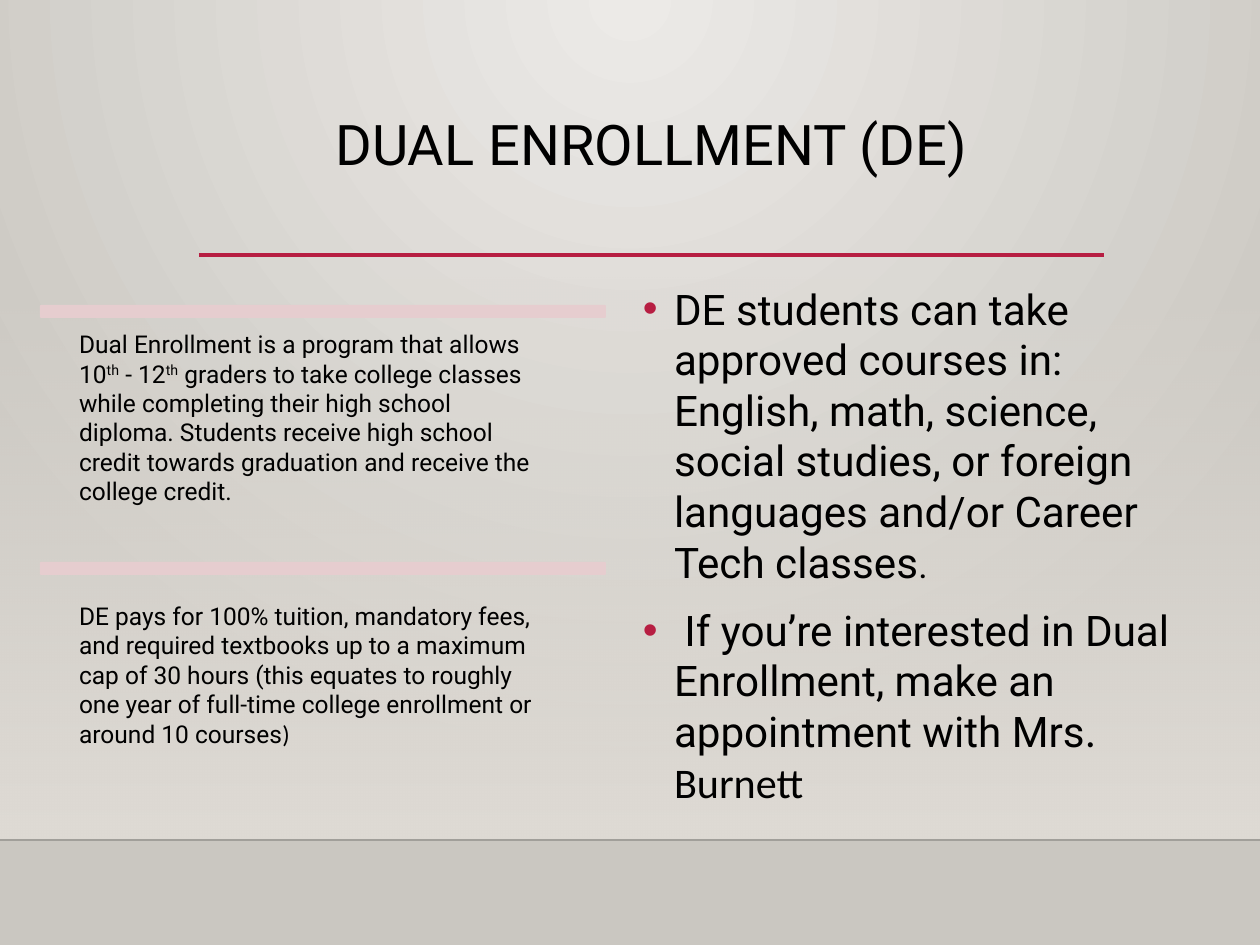
import dataclasses

import lxml.etree
import pptx
import pptx.dml.color
import pptx.enum.shapes
import pptx.enum.text
import pptx.oxml.ns
import pptx.util

qn = pptx.oxml.ns.qn
SHAPES = pptx.enum.shapes.MSO_SHAPE
ANCHOR = pptx.enum.text.MSO_ANCHOR
ALIGN = pptx.enum.text.PP_ALIGN


@dataclasses.dataclass(frozen=True)
class Theme:
    """Colours, fonts and type sizes of the slide."""
    text: str = "000000"
    accent: str = "B71E42"
    bar: str = "E6CDCF"
    light: str = "ECEAE7"
    dark: str = "CAC7C1"
    wall: str = "DFDBD5"
    edge: str = "000001"
    font: str = "Roboto"
    second_font: str = "Calibri"
    title_size: float = 32
    body_size: float = 24.1
    stop_size: float = 20.4
    note_size: float = 14


THEME = Theme()


def px(length):
    """Turn pixels into EMU."""
    return pptx.util.Emu(round(length * 914400 / 126))


def place(shape, box):
    """Move and size a shape to a pixel box."""
    shape.left, shape.top, shape.width, shape.height = map(px, box)


def rgb(color):
    """Return a colour object for a hex string."""
    return pptx.dml.color.RGBColor.from_string(color)


def add_text(paragraph, text, size, font=THEME.font, color=THEME.text, raised=False):
    """Append a formatted run to a paragraph."""
    run = paragraph.add_run()
    run.text = text
    run.font.size = pptx.util.Pt(size)
    run.font.name = font
    run.font.color.rgb = rgb(color)
    if raised:
        run.font._element.set("baseline", "30000")


def set_frame(frame, anchor, margin_x, margin_y):
    """Set wrapping, anchor and insets of a text frame."""
    frame.word_wrap = True
    frame.auto_size = pptx.enum.text.MSO_AUTO_SIZE.NONE
    frame.vertical_anchor = anchor
    frame.margin_left = frame.margin_right = px(margin_x)
    frame.margin_top = frame.margin_bottom = px(margin_y)


def set_gradient(parent, stops, direction):
    """Replace the gradient under an element with the given stops."""
    gradient = next(parent.iter(qn("a:gradFill")))
    for child in list(gradient):
        gradient.remove(child)
    stop_list = lxml.etree.SubElement(gradient, qn("a:gsLst"))
    for position, color, alpha in stops:
        stop = lxml.etree.SubElement(stop_list, qn("a:gs"), pos=str(position * 1000))
        fill = lxml.etree.SubElement(stop, qn("a:srgbClr"), val=color)
        if alpha < 100:
            lxml.etree.SubElement(fill, qn("a:alpha"), val=str(alpha * 1000))
    gradient.append(direction)


def add_line(slide, left, right, y, color, width, alpha=100):
    """Draw a horizontal line."""
    line = slide.shapes.add_connector(
        pptx.enum.shapes.MSO_CONNECTOR.STRAIGHT, px(left), px(y), px(right), px(y))
    line.line.color.rgb = rgb(color)
    line.line.width = pptx.util.Pt(width)
    if alpha < 100:
        fill = next(line._element.iter(qn("a:srgbClr")))
        lxml.etree.SubElement(fill, qn("a:alpha"), val=str(alpha * 1000))
    lxml.etree.SubElement(line._element.spPr, qn("a:effectLst"))
    return line


def add_block(slide, kind, box):
    """Add a shape without outline or shadow."""
    shape = slide.shapes.add_shape(kind, *map(px, box))
    shape.shadow.inherit = False
    shape.line.fill.background()
    return shape


def add_backdrop(slide, box):
    """Paint the background, with the wall and floor edge behind all else."""
    left, top, width, height = box
    slide.background.fill.gradient()
    circle = lxml.etree.Element(qn("a:path"), path="circle")
    lxml.etree.SubElement(circle, qn("a:fillToRect"), l="43000", t="0", r="43000", b="100000")
    set_gradient(slide._element, [(0, THEME.light, 100), (100, THEME.dark, 100)], circle)
    wall = add_block(slide, SHAPES.RECTANGLE, box)
    wall.fill.gradient()
    downward = lxml.etree.Element(qn("a:lin"), ang="5400000", scaled="0")
    set_gradient(wall._element.spPr, [(0, THEME.wall, 0), (100, THEME.wall, 100)], downward)
    edge = add_line(slide, left, left + width, top + height + 1, THEME.edge, 1, alpha=20)
    for shape in (edge, wall):
        slide.shapes._spTree.insert(2, shape._element)


def add_title(slide, box, text):
    """Fill the title placeholder and rule it off."""
    left, top, width, height = box
    title = slide.shapes.title
    place(title, box)
    set_frame(title.text_frame, ANCHOR.TOP, 13, 6)
    paragraph = title.text_frame.paragraphs[0]
    paragraph.alignment = ALIGN.CENTER
    paragraph.line_spacing = 0.9
    add_text(paragraph, text, THEME.title_size)
    add_line(slide, left, left + width, top + height - 2, THEME.accent, 2.5)


def add_note(slide, box, runs):
    """Add a bar with a note below it."""
    left, top, width, height = box
    bar = add_block(slide, SHAPES.ROUNDED_RECTANGLE, (left, top, width, 13))
    bar.adjustments[0] = 0.1
    bar.fill.solid()
    bar.fill.fore_color.rgb = rgb(THEME.bar)
    note = slide.shapes.add_textbox(*map(px, (left + 15, top, width - 53, height)))
    set_frame(note.text_frame, ANCHOR.MIDDLE, 24, 24)
    paragraph = note.text_frame.paragraphs[0]
    paragraph.alignment = ALIGN.LEFT
    for text, style in runs:
        add_text(paragraph, text, THEME.note_size, **style)


def add_list(slide, box, items):
    """Fill the body placeholder with bulleted items."""
    body = slide.placeholders[1]
    place(body, box)
    frame = body.text_frame
    set_frame(frame, ANCHOR.TOP, 13, 6)
    for index, runs in enumerate(items):
        paragraph = frame.add_paragraph() if index else frame.paragraphs[0]
        properties = paragraph._element.get_or_add_pPr()
        properties.set("marL", str(px(31)))
        properties.set("indent", str(px(-31)))
        bullet_color = lxml.etree.SubElement(properties, qn("a:buClr"))
        lxml.etree.SubElement(bullet_color, qn("a:srgbClr"), val=THEME.accent)
        lxml.etree.SubElement(properties, qn("a:buChar"), char="•")
        paragraph.space_before = pptx.util.Pt(10 if index else 0)
        for text, style in runs:
            add_text(paragraph, text, **{"size": THEME.body_size, **style})


def main():
    """Build the slide and save it."""
    presentation = pptx.Presentation()
    presentation.slide_width, presentation.slide_height = px(1260), px(945)
    slide = presentation.slides.add_slide(presentation.slide_layouts[1])
    second = {"font": THEME.second_font}
    raised = {"raised": True}
    notes = [
        [("Dual Enrollment is a program that allows 10", {}), ("th", raised),
         (" - 12", {}), ("th", raised),
         (" graders to take college classes while completing their high school diploma. "
          "Students receive high school credit towards graduation and receive the "
          "college credit.", {})],
        [("DE pays for 100% tuition, mandatory fees, and required textbooks up to a "
          "maximum cap of 30 hours (this equates to roughly one year of full-time "
          "college enrollment or around 10 courses", {}), (")", second)],
    ]
    items = [
        [("DE students can take approved courses in: English, math, science, social "
          "studies, or foreign languages and/or Career Tech classes", {}),
         (".", {"size": THEME.stop_size})],
        [(" If you’re interested in Dual Enrollment, make an appointment with Mrs", {}),
         (". Burnett", second)],
    ]
    add_backdrop(slide, (0, 277, 1260, 562))
    add_title(slide, (199, 111, 905, 146), "DUAL ENROLLMENT (DE)")
    for index, runs in enumerate(notes):
        add_note(slide, (40, 305 + 257 * index, 566, 225), runs)
    add_list(slide, (630, 277, 566, 546), items)
    presentation.save("out.pptx")


if __name__ == "__main__":
    main()
